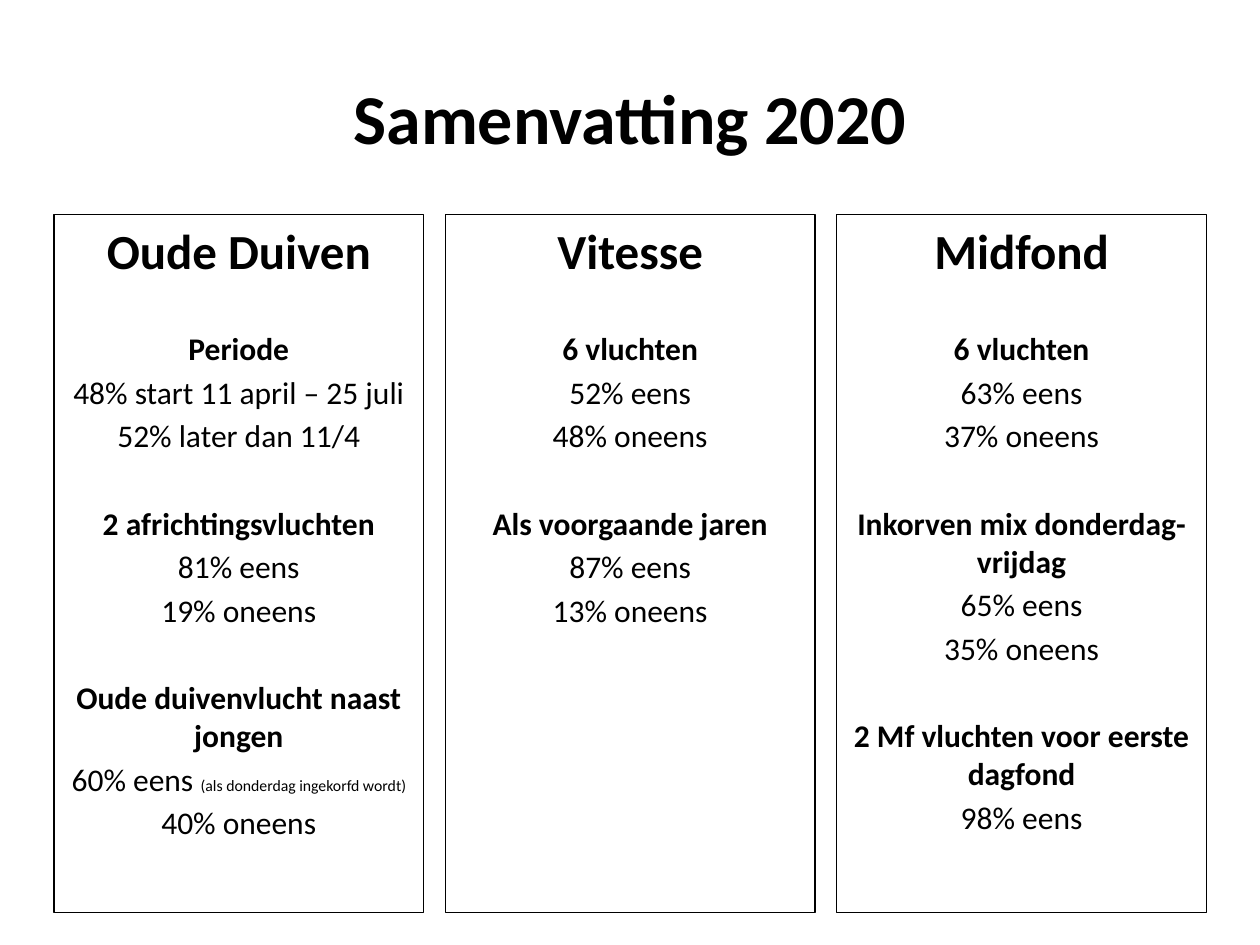
import pptx
import pptx.util
import pptx.dml.color
import pptx.enum.shapes
import pptx.enum.text

Cm = pptx.util.Cm
Pt = pptx.util.Pt
COLORS = {"ink": "000000", "paper": "FFFFFF"}
CENTER = pptx.enum.text.PP_ALIGN.CENTER
ANCHOR = pptx.enum.text.MSO_ANCHOR


def rgb(name):
    return pptx.dml.color.RGBColor.from_string(COLORS[name])


def format_paragraph(p, size, bold, before=0):
    p.alignment = CENTER
    p.space_before = Pt(before)
    for r in p.runs:
        r.font.name = "Calibri"
        r.font.size = Pt(size)
        r.font.bold = bold
        r.font.color.rgb = rgb("ink")


columns = [
    ("Oude Duiven", [
        ("Periode", ["48% start 11 april – 25 juli", "52% later dan 11/4"]),
        ("2 africhtingsvluchten", ["81% eens", "19% oneens"]),
        ("Oude duivenvlucht naast jongen",
         ["60% eens |(als donderdag ingekorfd wordt)", "40% oneens"]),
    ]),
    ("Vitesse", [
        ("6 vluchten", ["52% eens", "48% oneens"]),
        ("Als voorgaande jaren", ["87% eens", "13% oneens"]),
    ]),
    ("Midfond", [
        ("6 vluchten", ["63% eens", "37% oneens"]),
        ("Inkorven mix donderdag-vrijdag", ["65% eens", "35% oneens"]),
        ("2 Mf vluchten voor eerste dagfond", ["98% eens"]),
    ]),
]

prs = pptx.Presentation()
prs.slide_width = Cm(25.4)
prs.slide_height = Cm(19.05)
s = prs.slides.add_slide(prs.slide_layouts[6])
s.background.fill.solid()
s.background.fill.fore_color.rgb = rgb("paper")

sp = s.shapes.add_textbox(Cm(1.27), Cm(0.76), Cm(22.86), Cm(3.18))
tf = sp.text_frame
tf.word_wrap = True
tf.vertical_anchor = ANCHOR.MIDDLE
tf.text = "Samenvatting 2020"
format_paragraph(tf.paragraphs[0], 40, True)

for i, (heading, topics) in enumerate(columns):
    sp = s.shapes.add_shape(pptx.enum.shapes.MSO_SHAPE.RECTANGLE,
                            Cm(1.09 + i * 7.89), Cm(4.32), Cm(7.45), Cm(14.08))
    sp.shadow.inherit = False
    sp.fill.background()
    sp.line.color.rgb = rgb("ink")
    sp.line.width = Pt(0.75)
    tf = sp.text_frame
    tf.word_wrap = True
    tf.vertical_anchor = ANCHOR.TOP
    tf.text = heading
    format_paragraph(tf.paragraphs[0], 28, True)
    for topic, results in topics:
        p = tf.add_paragraph()
        p.text = topic
        format_paragraph(p, 18, True, 28.5)
        for result in results:
            text, _, note = result.partition("|")
            p = tf.add_paragraph()
            p.text = text
            if note:
                p.add_run().text = note
            format_paragraph(p, 18, False, 3.25)
            if note:
                p.runs[1].font.size = Pt(9)

prs.save("out.pptx")
